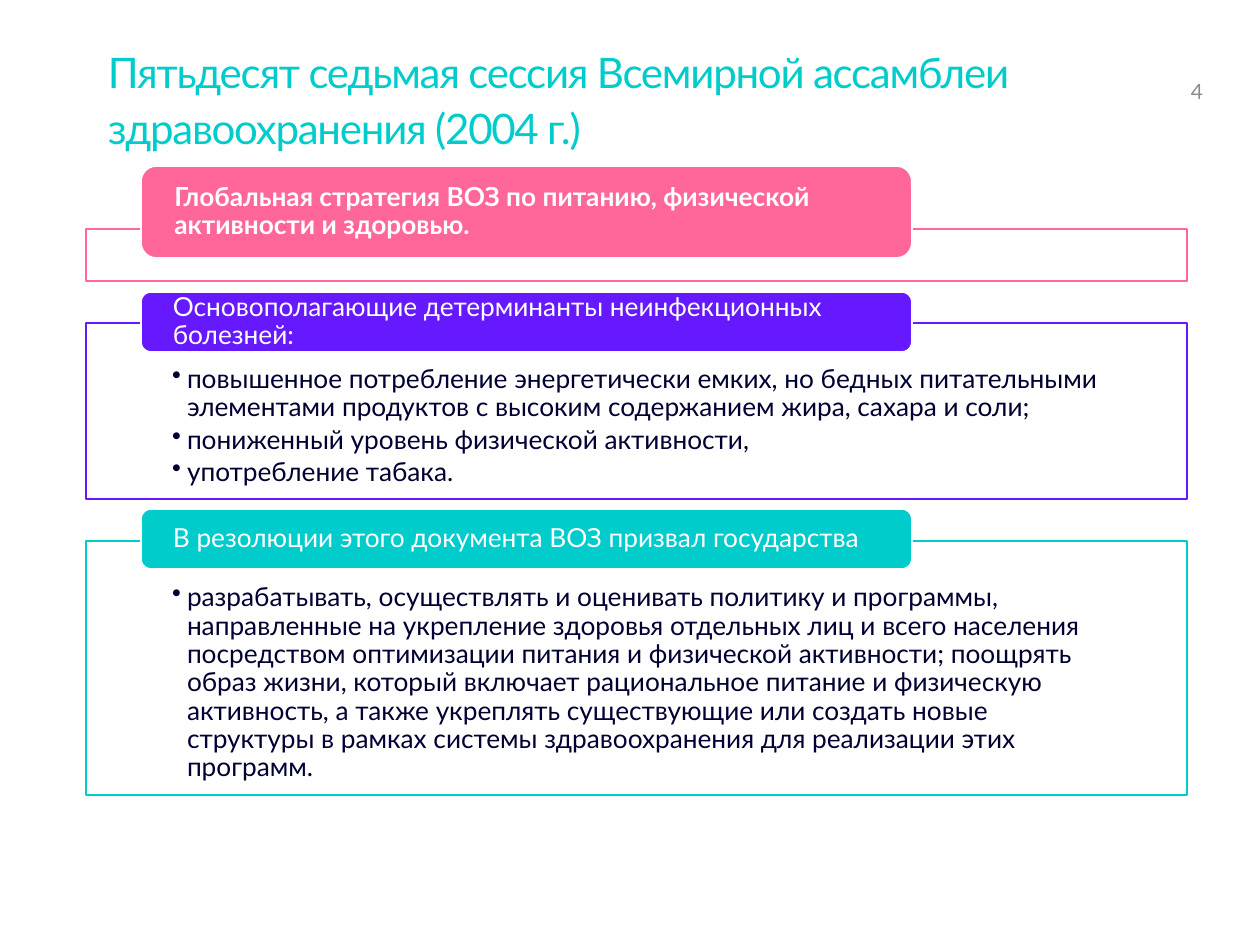
"""Build the slide on the 57th World Health Assembly session."""
import dataclasses
import typing

import lxml.etree
import pptx
import pptx.dml.color
import pptx.enum.shapes
import pptx.enum.text
import pptx.oxml.ns
import pptx.util

EMU_PER_PX = 914400 / 126


@dataclasses.dataclass(frozen=True)
class Theme:
    font: str = "Lato"
    pink: str = "FF6699"
    violet: str = "6619FF"
    teal: str = "00CCCC"
    ink: str = "000033"
    gray: str = "8C8C90"
    white: str = "FFFFFF"
    title_size: int = 24
    text_size: int = 15
    number_size: int = 12


class Area(typing.NamedTuple):
    left: int
    top: int
    width: int
    height: int


class Insets(typing.NamedTuple):
    left: int
    top: int
    right: int
    bottom: int


@dataclasses.dataclass(frozen=True)
class Section:
    heading: str
    color: str
    tab_top: int
    tab_height: int
    frame_top: int
    frame_height: int
    bullets: tuple[str, ...] = ()
    bold: bool = False


THEME = Theme()
FRAME_LEFT, FRAME_WIDTH = 86, 1101
TAB_LEFT, TAB_WIDTH = 141, 771
BULLET_INDENT = 15
SECTIONS = (
    Section("Глобальная стратегия ВОЗ по питанию, физической активности и здоровью.",
            THEME.pink, 166, 92, 229, 52, bold=True),
    Section("Основополагающие детерминанты неинфекционных болезней:",
            THEME.violet, 292, 60, 323, 176,
            ("повышенное потребление энергетически емких, но бедных питательными "
             "элементами продуктов с высоким содержанием жира, сахара и соли;",
             "пониженный уровень физической активности,",
             "употребление табака.")),
    Section("В резолюции этого документа ВОЗ призвал государства",
            THEME.teal, 509, 60, 541, 254,
            ("разрабатывать, осуществлять и оценивать политику и программы, "
             "направленные на укрепление здоровья отдельных лиц и всего населения "
             "посредством оптимизации питания и физической активности; поощрять "
             "образ жизни, который включает рациональное питание и физическую "
             "активность, а также укреплять существующие или создать новые структуры "
             "в рамках системы здравоохранения для реализации этих программ.",)),
)


def px(length: int) -> int:
    """Turn pixels into EMU."""
    return round(length * EMU_PER_PX)


def rgb(color: str) -> pptx.dml.color.RGBColor:
    """Turn a hex string into a colour."""
    return pptx.dml.color.RGBColor.from_string(color)


def set_frame(frame, insets: Insets, anchor) -> None:
    """Set wrapping, insets and vertical anchor of a text frame."""
    frame.word_wrap = True
    frame.vertical_anchor = anchor
    for side, length in zip(insets._fields, insets):
        setattr(frame, f"margin_{side}", px(length))


def style(paragraph, size: int, color: str, bold: bool = False) -> None:
    """Set alignment and font of a paragraph."""
    paragraph.alignment = pptx.enum.text.PP_ALIGN.LEFT
    paragraph.font.name = THEME.font
    paragraph.font.size = pptx.util.Pt(size)
    paragraph.font.bold = bold
    paragraph.font.color.rgb = rgb(color)


def add_label(page, text: str, area: Area, insets: Insets, anchor, size: int, color: str):
    """Add a one-paragraph text box and return its paragraph."""
    box = page.shapes.add_textbox(*map(px, area))
    set_frame(box.text_frame, insets, anchor)
    paragraph = box.text_frame.paragraphs[0]
    paragraph.text = text
    style(paragraph, size, color)
    return paragraph


def add_box(page, preset, area: Area, fill: str, line: str):
    """Add a filled and outlined preset shape."""
    box = page.shapes.add_shape(preset, *map(px, area))
    box.shadow.inherit = False
    box.fill.solid()
    box.fill.fore_color.rgb = rgb(fill)
    box.line.color.rgb = rgb(line)
    box.line.width = pptx.util.Pt(1)
    return box


def add_bullet(paragraph) -> None:
    """Give a paragraph a hanging round bullet."""
    properties = paragraph._p.get_or_add_pPr()
    properties.set("marL", str(px(BULLET_INDENT)))
    properties.set("indent", str(-px(BULLET_INDENT)))
    bullet = lxml.etree.SubElement(properties, pptx.oxml.ns.qn("a:buChar"))
    bullet.set("char", "•")


def add_section(page, section: Section) -> None:
    """Draw the framed body and the heading tab over its top edge."""
    presets = pptx.enum.shapes.MSO_SHAPE
    anchors = pptx.enum.text.MSO_ANCHOR
    frame_area = Area(FRAME_LEFT, section.frame_top, FRAME_WIDTH, section.frame_height)
    body = add_box(page, presets.RECTANGLE, frame_area, THEME.white, section.color)
    set_frame(body.text_frame, Insets(86, 43, 86, 15), anchors.TOP)
    for index, text in enumerate(section.bullets):
        frame = body.text_frame
        paragraph = frame.add_paragraph() if index else frame.paragraphs[0]
        paragraph.text = text
        add_bullet(paragraph)
        paragraph.line_spacing = 0.9
        paragraph.space_after = pptx.util.Pt(2.25)
        style(paragraph, THEME.text_size, THEME.ink)

    tab_area = Area(TAB_LEFT, section.tab_top, TAB_WIDTH, section.tab_height)
    tab = add_box(page, presets.ROUNDED_RECTANGLE, tab_area, section.color, THEME.white)
    set_frame(tab.text_frame, Insets(29, 0, 29, 0), anchors.MIDDLE)
    heading = tab.text_frame.paragraphs[0]
    heading.text = section.heading
    heading.line_spacing = 0.9
    style(heading, THEME.text_size, THEME.white, section.bold)


def main() -> None:
    """Build and save the deck."""
    deck = pptx.Presentation()
    deck.slide_width, deck.slide_height = px(1260), px(945)
    page = deck.slides.add_slide(deck.slide_layouts[6])
    anchors = pptx.enum.text.MSO_ANCHOR
    title = add_label(page, "Пятьдесят седьмая сессия Всемирной ассамблеи здравоохранения (2004 г.)",
                      Area(108, 35, 1086, 130), Insets(0, 6, 0, 6), anchors.TOP,
                      THEME.title_size, THEME.teal)
    title.line_spacing = pptx.util.Pt(32)
    title.runs[0].font._element.set("spc", "-70")
    add_label(page, "4", Area(1191, 50, 48, 59), Insets(0, 5, 0, 5), anchors.BOTTOM,
              THEME.number_size, THEME.gray)
    for section in SECTIONS:
        add_section(page, section)
    deck.save("out.pptx")


if __name__ == "__main__":
    main()
